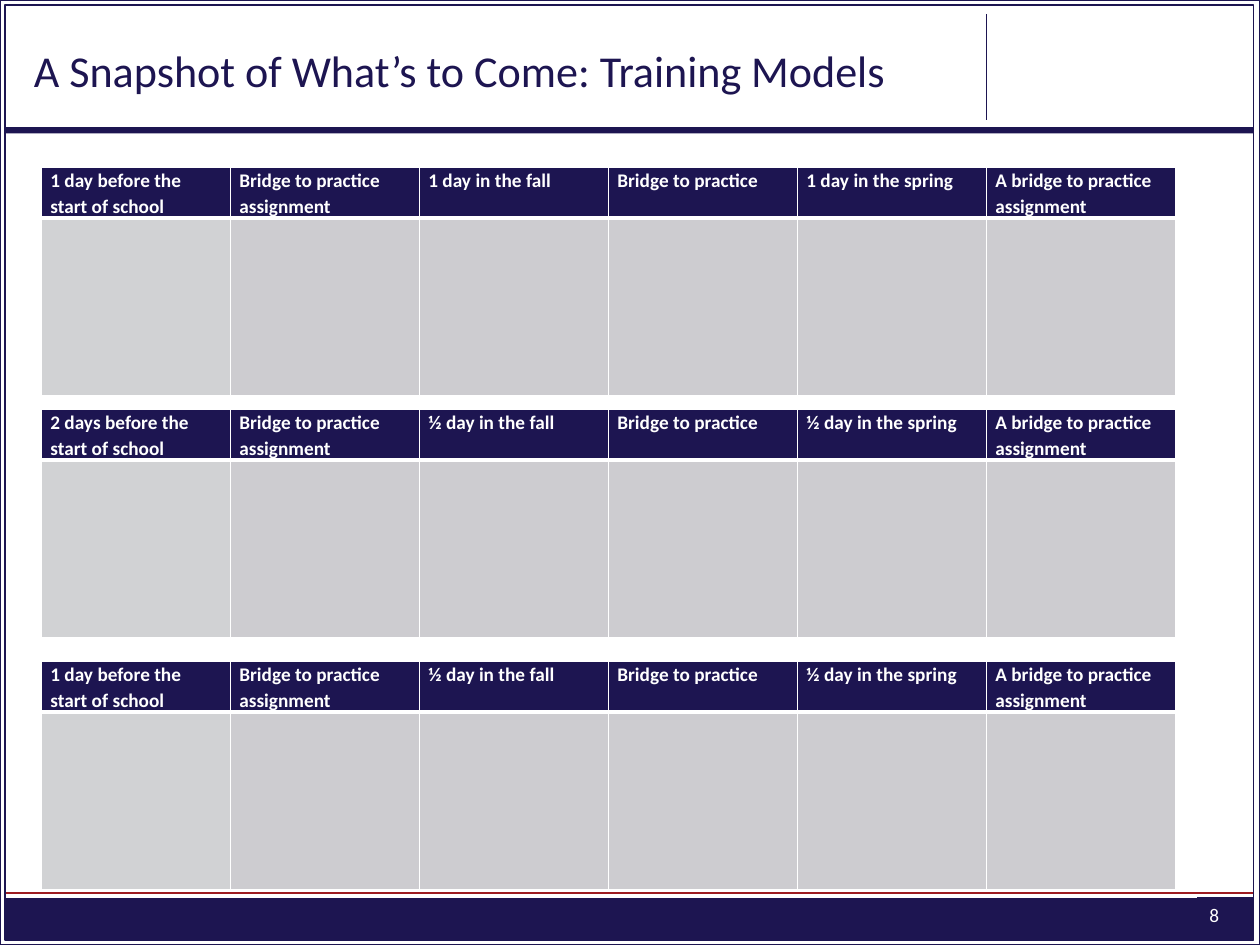
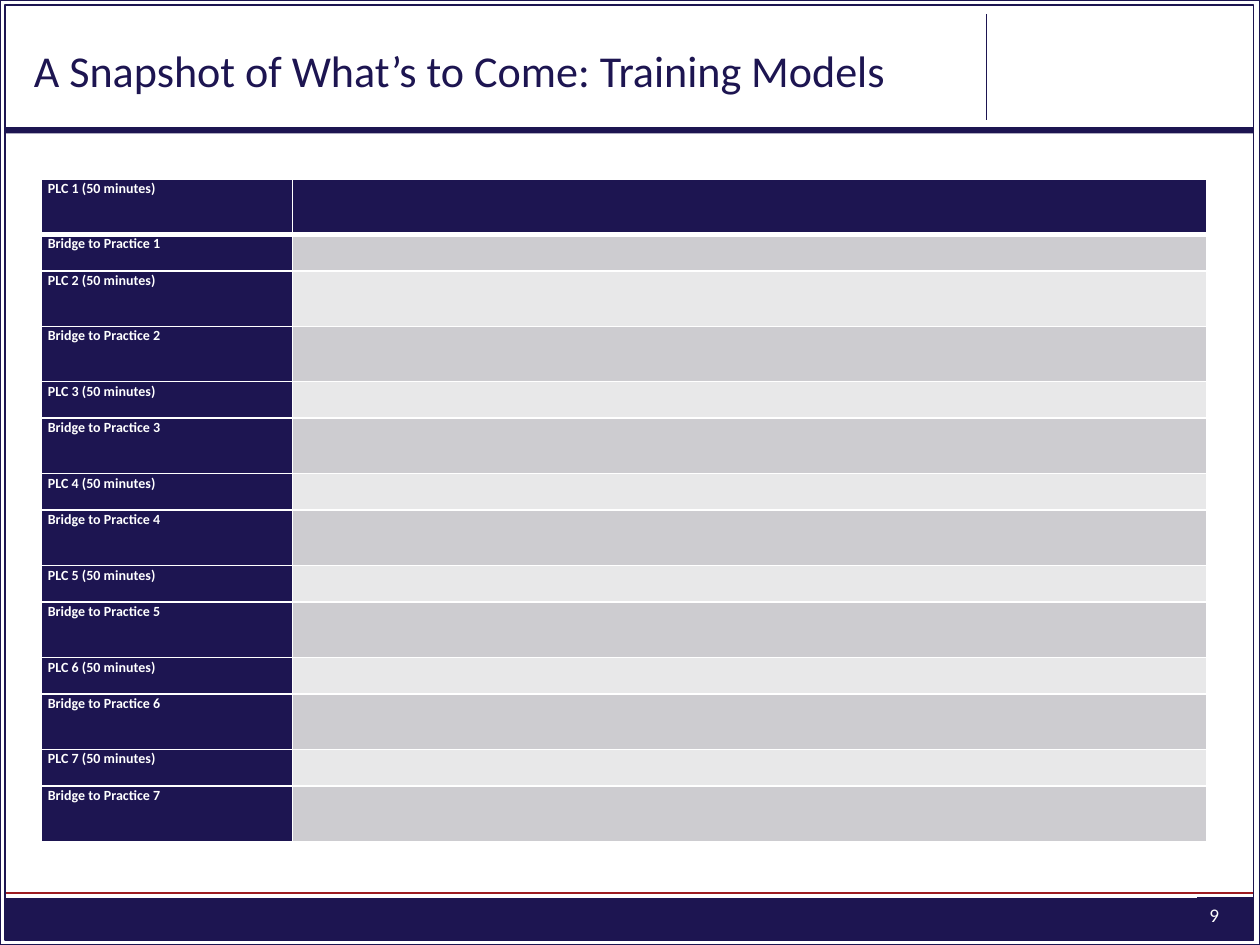
from dataclasses import dataclass

from lxml.etree import SubElement
from pptx import Presentation
from pptx.dml.color import RGBColor as Rgb
from pptx.enum.shapes import MSO_CONNECTOR as Connector, MSO_SHAPE as Shape
from pptx.enum.text import MSO_ANCHOR as Anchor
from pptx.oxml import parse_xml
from pptx.oxml.ns import nsdecls, qn
from pptx.util import Inches, Pt


@dataclass(frozen=True)
class Theme:
    font: str = "Calibri"
    navy: str = "1D1551"
    red: str = "9D1C21"
    white: str = "FFFFFF"
    first_cell: str = "D1D2D4"
    dark_band: str = "CDCCD0"
    light_band: str = "E8E8E9"
    title_size: float = 25.2
    label_size: float = 11
    small_size: float = 8
    line_spacing: float = 1.07
    thin: float = 1
    thick: float = 3


@dataclass(frozen=True)
class Box:
    left: float
    top: float
    width: float
    height: float

    def lengths(self):
        return [Inches(v) for v in (self.left, self.top, self.width, self.height)]


THEME = Theme()
FRAME = Box(0.04, 0.04, 9.91, 7.42)
TITLE = "A Snapshot of What’s to Come: Training Models"

# Opening, autumn and spring sessions of each training model, with the table top
MODELS = [
    (1.33, "1 day", "1 day", "1 day"),
    (3.25, "2 days", "½ day", "½ day"),
    (5.25, "1 day", "½ day", "½ day"),
]


# Shared drawing helpers
def set_format(target, formats):
    for name, value in formats.items():
        setattr(target, name, value)


def write(para, text, size, color, bold=False):
    span = para.add_run()
    span.text = text
    set_format(span.font, {"name": THEME.font, "size": Pt(size), "bold": bold})
    span.font.color.rgb = Rgb.from_string(color)


def add_rectangle(page, box, fill=None, line=None, width=0):
    shape = page.shapes.add_shape(Shape.RECTANGLE, *box.lengths())
    shape.shadow.inherit = False
    if fill:
        shape.fill.solid()
        shape.fill.fore_color.rgb = Rgb.from_string(fill)
    else:
        shape.fill.background()
    if line:
        shape.line.color.rgb = Rgb.from_string(line)
        shape.line.width = Pt(width)
    else:
        shape.line.fill.background()
    return shape


def add_rule(page, start, end, color):
    ends = [Inches(v) for v in (*start, *end)]
    rule = page.shapes.add_connector(Connector.STRAIGHT, *ends)
    rule.line.color.rgb = Rgb.from_string(color)
    rule.line.width = Pt(THEME.thin)
    SubElement(rule._element.spPr, qn("a:effectLst"))


def add_text(page, box, text, size, color, anchor):
    frame = page.shapes.add_textbox(*box.lengths()).text_frame
    set_format(frame, {"word_wrap": True, "vertical_anchor": anchor})
    write(frame.paragraphs[0], text, size, color)


def add_grid(page, box, columns, rows):
    grid = page.shapes.add_table(len(rows), len(columns), *box.lengths()).table
    set_format(grid, {"first_row": False, "horz_banding": False})
    for column, width in zip(grid.columns, columns):
        column.width = Inches(width)
    for row, height in zip(grid.rows, rows):
        row.height = Inches(height)
    return grid


def fill_cell(cell, fill, text="", size=THEME.small_size, inset=0.05):
    margins = {"margin_left": inset, "margin_right": inset, "margin_top": 0, "margin_bottom": 0}
    set_format(cell, {name: Inches(value) for name, value in margins.items()})
    cell.fill.solid()
    cell.fill.fore_color.rgb = Rgb.from_string(fill)
    para = cell.text_frame.paragraphs[0]
    para.line_spacing = THEME.line_spacing
    if text:
        write(para, text, size, THEME.white, bold=True)
    else:
        SubElement(para._p, qn("a:endParaRPr"), sz=str(size * 100))


def add_borders(cell, row_index):
    """White edges, thick between the first and second rows."""
    widths = {"L": THEME.thin, "R": THEME.thin, "T": THEME.thin, "B": THEME.thin}
    if row_index < 2:
        widths["BT"[row_index]] = THEME.thick
    properties = cell._tc.get_or_add_tcPr()
    for position, (side, width) in enumerate(widths.items()):
        edge = parse_xml(
            f'<a:ln{side} {nsdecls("a")} w="{Pt(width)}"><a:solidFill>'
            f'<a:srgbClr val="{THEME.white}"/></a:solidFill></a:ln{side}>'
        )
        properties.insert(position, edge)


# Page regions
def draw_header(page, box):
    add_rectangle(page, Box(box.left, box.top + 0.97, box.width, 0.05), THEME.navy)
    divider = box.left + 7.79
    add_rule(page, (divider, box.top + 0.07), (divider, box.top + 0.91), THEME.navy)
    title_box = Box(box.left + 0.13, box.top + 0.12, 7.19, 0.79)
    add_text(page, title_box, TITLE, THEME.title_size, THEME.navy, Anchor.MIDDLE)


def draw_footer(page, box, number):
    band_height, number_width = 0.34, 0.45
    right, top = box.left + box.width, box.top + box.height - band_height
    add_rule(page, (box.left, top - 0.03), (right, top - 0.03), THEME.red)
    band = Box(box.left, top, 9.54, band_height)
    grid = add_grid(page, band, [band.width], [band.height])
    fill_cell(grid.cell(0, 0), THEME.navy)
    number_box = Box(right - number_width, top, number_width, band_height)
    add_rectangle(page, number_box, THEME.navy)
    add_text(page, number_box, str(number), THEME.label_size, THEME.white, Anchor.TOP)


def draw_page(deck, number):
    page = deck.slides.add_slide(deck.slide_layouts[6])
    add_rectangle(page, Box(0, 0, 10, 7.5), line=THEME.navy, width=THEME.thin)
    draw_header(page, FRAME)
    draw_footer(page, FRAME, number)
    add_rectangle(page, FRAME, line=THEME.navy)
    return page


def draw_model(page, box, opening, fall, spring):
    """One training model: session headings above empty cells."""
    headings = [
        f"{opening} before the start of school",
        "Bridge to practice assignment",
        f"{fall} in the fall",
        "Bridge to practice",
        f"{spring} in the spring",
        "A bridge to practice assignment",
    ]
    columns = [box.width / len(headings)] * len(headings)
    heading_height = 0.4
    grid = add_grid(page, box, columns, [heading_height, box.height - heading_height])
    for index, heading in enumerate(headings):
        top, body = grid.cell(0, index), grid.cell(1, index)
        fill_cell(top, THEME.navy, heading, THEME.label_size, 0.07)
        fill_cell(body, THEME.dark_band if index else THEME.first_cell)
        add_borders(top, 0)
        add_borders(body, 1)


def draw_sessions(page, box):
    """Alternating PLC meetings and bridge assignments."""
    labels = [
        label
        for number in range(1, 8)
        for label in (f"PLC {number} (50 minutes)", f"Bridge to Practice {number}")
    ]
    tall, short = 0.44, 0.29
    heights = [tall, short, tall] + [tall, short] * 5 + [tall]
    label_width = 1.99
    grid = add_grid(page, box, [label_width, box.width - label_width], heights)
    for index, label in enumerate(labels):
        name, content = grid.cell(index, 0), grid.cell(index, 1)
        band = THEME.dark_band if index % 2 else THEME.light_band
        fill_cell(name, THEME.navy, label)
        fill_cell(content, band if index else THEME.navy)
        add_borders(name, index)
        add_borders(content, index)


def main():
    deck = Presentation()
    set_format(deck, {"slide_width": Inches(10), "slide_height": Inches(7.5)})

    # Day-based models
    page = draw_page(deck, 8)
    for top, *sessions in MODELS:
        draw_model(page, Box(0.33, top, 9, 1.81), *sessions)

    # PLC-based model
    page = draw_page(deck, 9)
    draw_sessions(page, Box(0.33, 1.42, 9.25, 5.26))

    deck.save("out.pptx")


if __name__ == "__main__":
    main()
